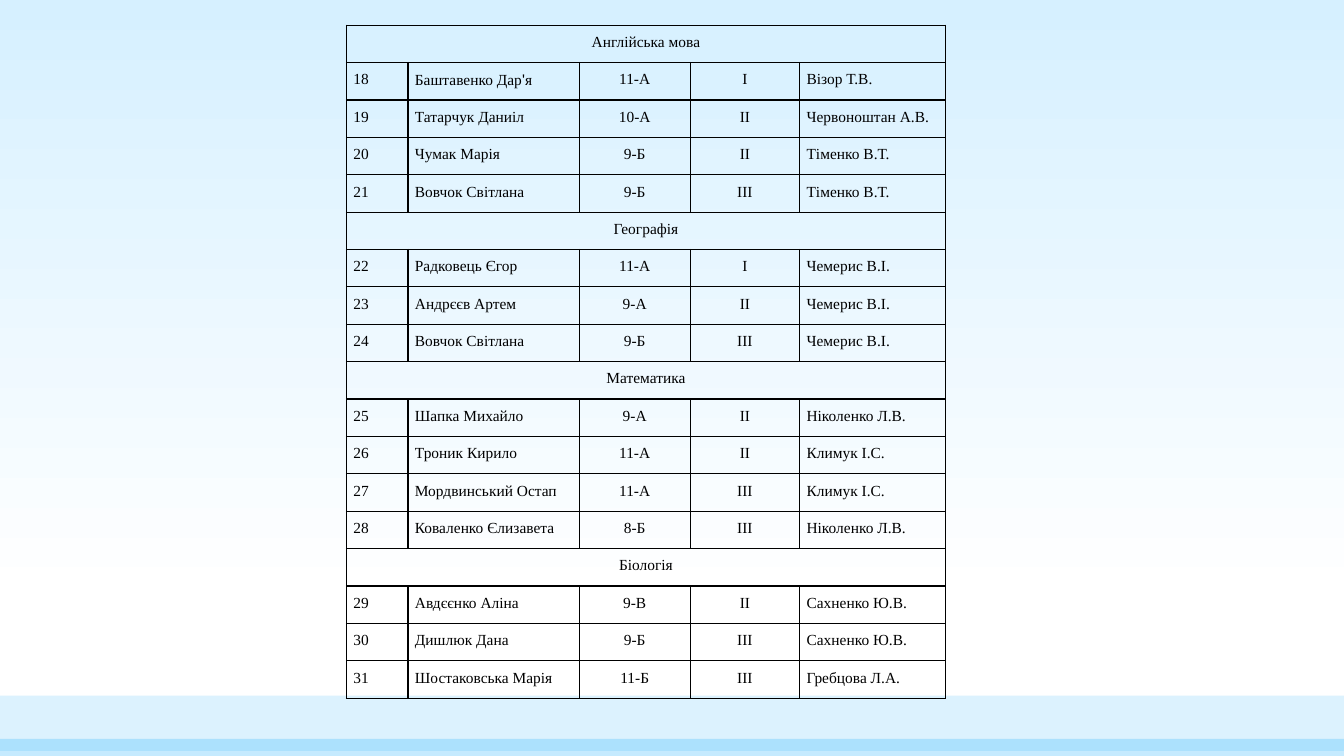
from lxml.etree import SubElement
from pptx import Presentation
from pptx.dml.color import RGBColor
from pptx.enum.shapes import MSO_SHAPE
from pptx.enum.text import MSO_ANCHOR, PP_ALIGN
from pptx.oxml.ns import qn
from pptx.util import Pt

SUBJECTS = {
    "Англійська мова": [
        ("Баштавенко Дар'я", "11-А", "І", "Візор Т.В."),
        ("Татарчук Даниіл", "10-А", "ІІ", "Червоноштан А.В."),
        ("Чумак Марія", "9-Б", "ІІ", "Тіменко В.Т."),
        ("Вовчок Світлана", "9-Б", "ІІІ", "Тіменко В.Т."),
    ],
    "Географія": [
        ("Радковець Єгор", "11-А", "І", "Чемерис В.І."),
        ("Андрєєв Артем", "9-А", "ІІ", "Чемерис В.І."),
        ("Вовчок Світлана", "9-Б", "ІІІ", "Чемерис В.І."),
    ],
    "Математика": [
        ("Шапка Михайло", "9-А", "ІІ", "Ніколенко Л.В."),
        ("Троник Кирило", "11-А", "ІІ", "Климук І.С."),
        ("Мордвинський Остап", "11-А", "ІІІ", "Климук І.С."),
        ("Коваленко Єлизавета", "8-Б", "ІІІ", "Ніколенко Л.В."),
    ],
    "Біологія": [
        ("Авдєєнко Аліна", "9-В", "ІІ", "Сахненко Ю.В."),
        ("Дишлюк Дана", "9-Б", "ІІІ", "Сахненко Ю.В."),
        ("Шостаковська Марія", "11-Б", "ІІІ", "Гребцова Л.А."),
    ],
}
FIRST_NUMBER = 18
COLORS = {"sky": "D6F0FF", "white": "FFFFFF", "band": "31B6FD", "ink": "000000"}
BANDS = [(496.8, 39.6, 17), (527.8, 12.2, 28)]  # top, height, opacity in percent
WIDTH, HEIGHT = 960, 540
TABLE_LEFT, TABLE_TOP, ROW_HEIGHT = 247.5, 18, 26.72
COL_WIDTHS = [43.9, 122.4, 79.2, 78.2, 104.2]
LEFT, CENTER = PP_ALIGN.LEFT, PP_ALIGN.CENTER
COL_ALIGNS = [LEFT, LEFT, CENTER, CENTER, LEFT]


def rgb(name):
    return RGBColor.from_string(COLORS[name])


def paint_background(s):
    fill = s.background.fill
    fill.gradient()
    fill.gradient_angle = 270
    for stop, position, name in zip(fill.gradient_stops, (0, 0.79), ("sky", "white")):
        stop.position = position
        stop.color.rgb = rgb(name)


def add_band(s, top, height, opacity):
    sp = s.shapes.add_shape(MSO_SHAPE.RECTANGLE, 0, Pt(top), Pt(WIDTH), Pt(height))
    sp.shadow.inherit = False
    sp.line.fill.background()
    sp.fill.solid()
    sp.fill.fore_color.rgb = rgb("band")
    color = sp.fill._xPr.find(".//" + qn("a:srgbClr"))
    SubElement(color, qn("a:alpha"), val=str(opacity * 1000))


def style_cell(cell):
    """Draw thin borders on all sides, clear the fill and set the margins."""
    tcPr = cell._tc.get_or_add_tcPr()
    for side in ("lnL", "lnR", "lnT", "lnB"):
        ln = SubElement(tcPr, qn("a:" + side), w=str(Pt(1)))
        solid = SubElement(ln, qn("a:solidFill"))
        SubElement(solid, qn("a:srgbClr"), val=COLORS["ink"])
    cell.fill.background()
    cell.margin_left = cell.margin_right = Pt(5)
    cell.margin_top = cell.margin_bottom = 0
    cell.vertical_anchor = MSO_ANCHOR.TOP


def write_cell(cell, text, align):
    p = cell.text_frame.paragraphs[0]
    p.alignment = align
    p.line_spacing = 1.5
    p.font.name = "Times New Roman"
    p.font.size = Pt(11)
    p.font.color.rgb = rgb("ink")
    for part in filter(None, text.partition("'")):
        r = p.add_run()
        r.text = part
        if part == "'":
            r.font.name = "Arial"


def add_results(s):
    rows = []
    number = FIRST_NUMBER
    for subject, winners in SUBJECTS.items():
        rows.append((subject,))
        for winner in winners:
            rows.append((str(number), *winner))
            number += 1

    frame = s.shapes.add_table(len(rows), len(COL_WIDTHS), Pt(TABLE_LEFT), Pt(TABLE_TOP),
                               Pt(sum(COL_WIDTHS)), Pt(ROW_HEIGHT * len(rows)))
    table = frame.table
    table.first_row = table.horz_banding = False
    for column, width in zip(table.columns, COL_WIDTHS):
        column.width = Pt(width)
    for i, row in enumerate(rows):
        table.rows[i].height = Pt(ROW_HEIGHT)
        for cell in table.rows[i].cells:
            style_cell(cell)
        if len(row) == 1:
            table.cell(i, 0).merge(table.cell(i, len(COL_WIDTHS) - 1))
            write_cell(table.cell(i, 0), row[0], CENTER)
        else:
            for j, text in enumerate(row):
                write_cell(table.cell(i, j), text, COL_ALIGNS[j])


def main():
    prs = Presentation()
    prs.slide_width, prs.slide_height = Pt(WIDTH), Pt(HEIGHT)
    s = prs.slides.add_slide(prs.slide_layouts[6])
    paint_background(s)
    for band in BANDS:
        add_band(s, *band)
    add_results(s)
    prs.save("out.pptx")


if __name__ == "__main__":
    main()
